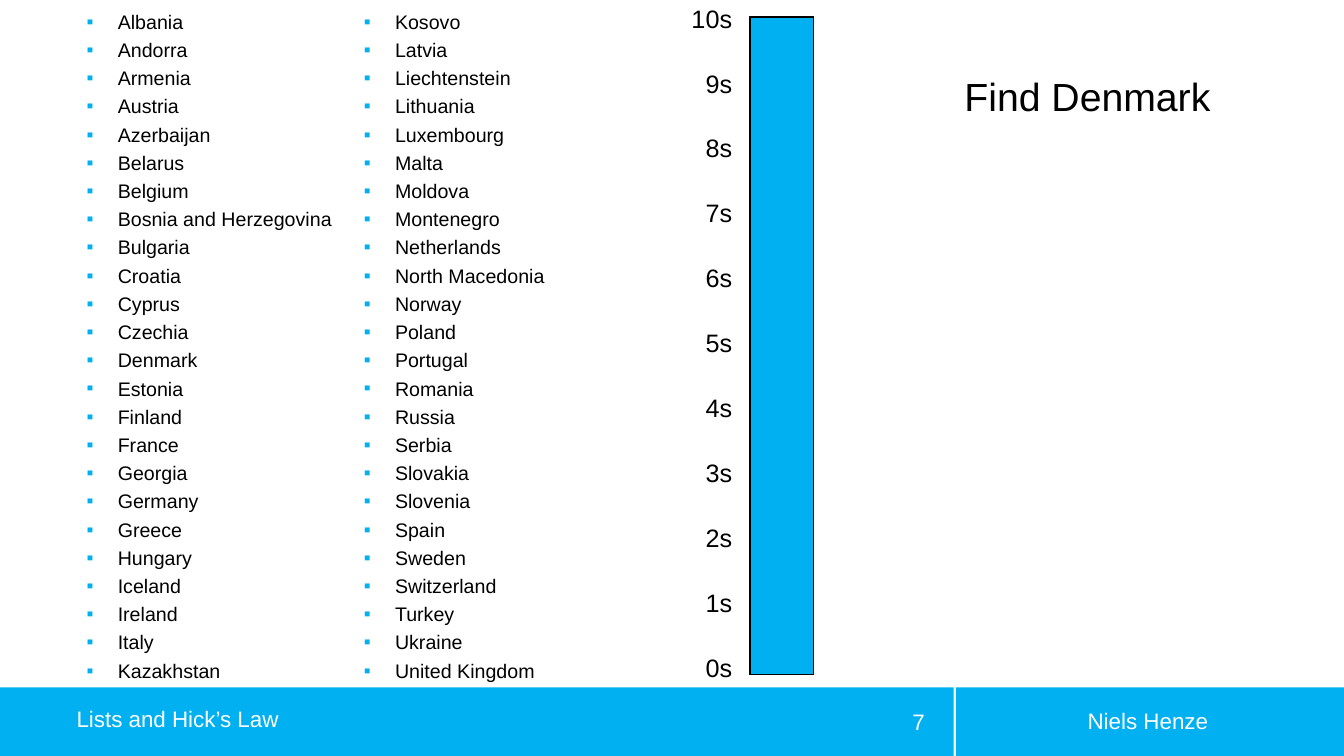
from lxml import etree
from pptx import Presentation
from pptx.dml.color import RGBColor
from pptx.enum import shapes, text
from pptx.oxml import ns
from pptx.util import Inches, Pt

# Content
COUNTRY_COLUMNS = [
    (0.76, 2.68, [
        "Albania", "Andorra", "Armenia", "Austria", "Azerbaijan", "Belarus",
        "Belgium", "Bosnia and Herzegovina", "Bulgaria", "Croatia", "Cyprus",
        "Czechia", "Denmark", "Estonia", "Finland", "France", "Georgia",
        "Germany", "Greece", "Hungary", "Iceland", "Ireland", "Italy",
        "Kazakhstan"]),
    (3.51, 2.87, [
        "Kosovo", "Latvia", "Liechtenstein", "Lithuania", "Luxembourg",
        "Malta", "Moldova", "Montenegro", "Netherlands", "North Macedonia",
        "Norway", "Poland", "Portugal", "Romania", "Russia", "Serbia",
        "Slovakia", "Slovenia", "Spain", "Sweden", "Switzerland", "Turkey",
        "Ukraine", "United Kingdom"]),
]
TASK = "Find Denmark"
LECTURE, PAGE, LECTURER = "Lists and Hick’s Law", "7", "Niels Henze"
SECONDS = 10

# Layout in inches
FOOTER_TOP, FOOTER_HEIGHT = 6.82, 0.68
FOOTER_PANELS = [(9.48, 3.85), (0, 9.46)]
TIMER = (7.44, 0.17, 0.63, 6.52)
SCALE_RIGHT, SCALE_TOP, SCALE_BOTTOM = 7.37, -0.02, 6.42
LABEL_HEIGHT = 0.4
BULLET_INDENT = 0.31


class Theme:
    font = "Arial"
    blue = RGBColor(0x00, 0xB0, 0xF0)
    black = RGBColor(0, 0, 0)
    white = RGBColor(255, 255, 255)
    list_size, footer_size, scale_size, task_size = 14, 16, 18, 28


LEFT, CENTER, RIGHT = (text.PP_ALIGN.LEFT, text.PP_ALIGN.CENTER,
                       text.PP_ALIGN.RIGHT)

deck = Presentation()
deck.slide_width, deck.slide_height = Inches(13.33), Inches(7.5)
slide = deck.slides.add_slide(deck.slide_layouts[6])


def add_rect(box, fill=None, line=None):
    rect = slide.shapes.add_shape(shapes.MSO_SHAPE.RECTANGLE,
                                  *map(Inches, box))
    rect.shadow.inherit = False
    if fill is None:
        rect.fill.background()
    else:
        rect.fill.solid()
        rect.fill.fore_color.rgb = fill
    if line is None:
        rect.line.fill.background()
    else:
        rect.line.color.rgb = line
        rect.line.width = Pt(1)


def add_text(box, lines, size, color=Theme.black, align=LEFT, wrap=True,
             middle=False, spacing=None):
    frame = slide.shapes.add_textbox(*map(Inches, box)).text_frame
    frame.word_wrap = wrap
    if middle:
        frame.vertical_anchor = text.MSO_ANCHOR.MIDDLE
    frame.text = "\n".join(lines)
    for paragraph in frame.paragraphs:
        paragraph.alignment = align
        paragraph.line_spacing = spacing
        font = paragraph.runs[0].font
        font.name, font.size, font.color.rgb = Theme.font, Pt(size), color
    return frame


def add_bullet(paragraph):
    props = paragraph._p.get_or_add_pPr()
    props.set("marL", str(Inches(BULLET_INDENT)))
    props.set("indent", str(-Inches(BULLET_INDENT)))
    color = etree.SubElement(props, ns.qn("a:buClr"))
    etree.SubElement(color, ns.qn("a:srgbClr"), val=str(Theme.blue))
    etree.SubElement(props, ns.qn("a:buFont"), typeface=Theme.font)
    etree.SubElement(props, ns.qn("a:buChar"), char="▪")


# Footer
for left, width in FOOTER_PANELS:
    add_rect((left, FOOTER_TOP, width, FOOTER_HEIGHT), Theme.blue)
add_text((9.61, 6.95, 3.55, 0.4), [LECTURER], Theme.footer_size, Theme.white,
         CENTER, middle=True)
add_text((8.41, 6.96, 0.86, 0.4), [PAGE], Theme.footer_size, Theme.white,
         RIGHT, middle=True)
lecture = add_text((0.76, 6.95, 6.14, 0.4), [LECTURE], Theme.footer_size,
                   Theme.white, middle=True, spacing=0.9)
lecture.margin_left = lecture.margin_right = 0
lecture.margin_top = lecture.margin_bottom = 0

# Country lists
for left, width, countries in COUNTRY_COLUMNS:
    column = add_text((left, 0, width, 6.83), countries, Theme.list_size,
                      spacing=1.2)
    for entry in column.paragraphs:
        add_bullet(entry)

# Timer bar, its scale and its frame
add_rect(TIMER, Theme.blue, Theme.black)
step = (SCALE_BOTTOM - SCALE_TOP) / SECONDS
for second in range(SECONDS + 1):
    width = 0.61 if second >= 10 else 0.47
    add_text((SCALE_RIGHT - width, SCALE_BOTTOM - second * step, width,
              LABEL_HEIGHT), [f"{second}s"], Theme.scale_size, wrap=False)
add_rect(TIMER, line=Theme.black)

# Task
add_text((9.42, 0.67, 2.73, 0.57), [TASK], Theme.task_size, align=CENTER)

deck.save("out.pptx")
